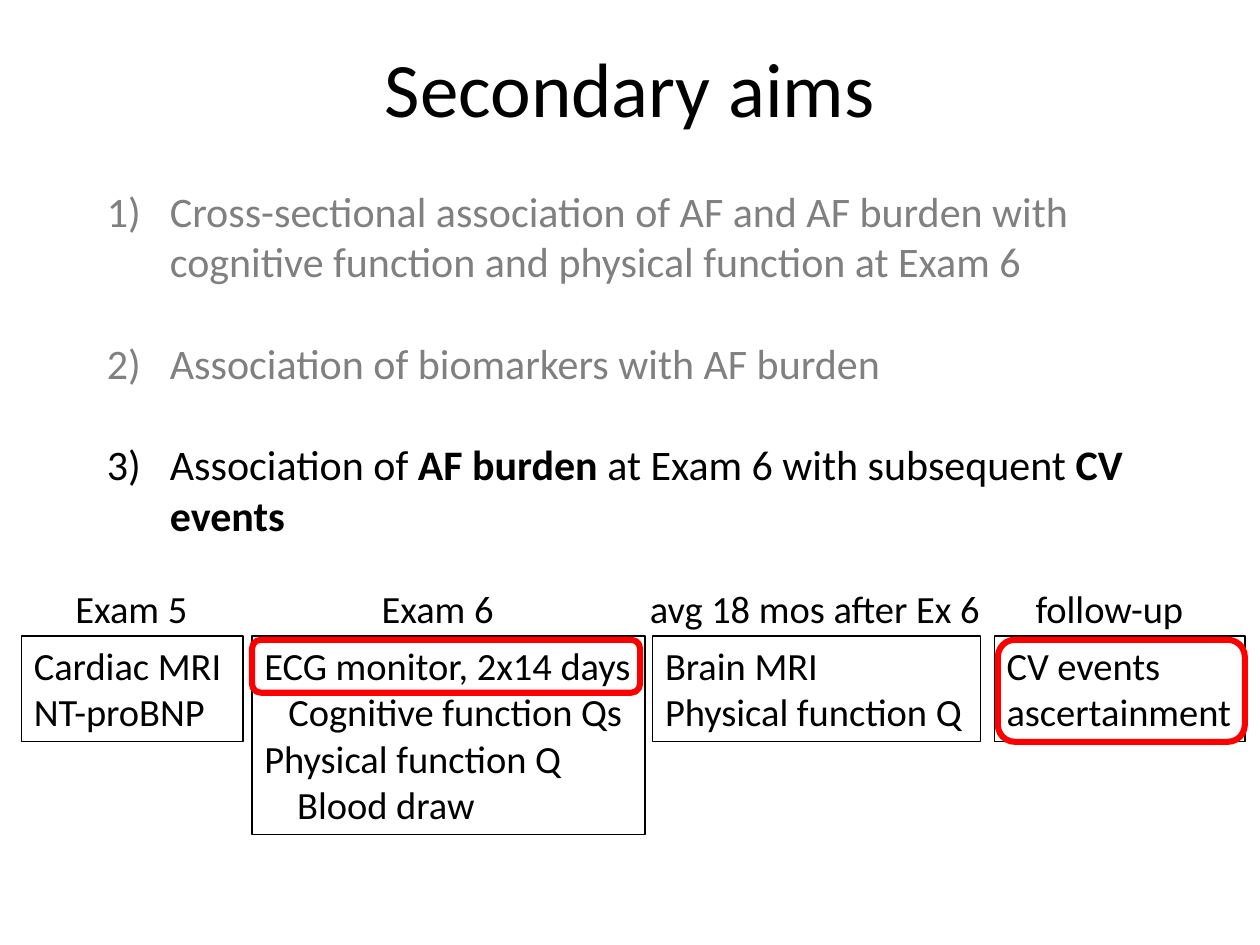
"""Build the "Secondary aims" slide with its study timeline."""
from dataclasses import dataclass
from typing import NamedTuple

from lxml.etree import SubElement
from pptx import Presentation
from pptx.dml.color import RGBColor as RGB
from pptx.enum.shapes import MSO_SHAPE as Shape
from pptx.enum.text import MSO_ANCHOR as Anchor, MSO_AUTO_SIZE as Fit, PP_ALIGN as Align
from pptx.oxml.ns import qn
from pptx.util import Inches, Pt

WIDTH, HEIGHT = Inches(10), Inches(7.5)


@dataclass(frozen=True)
class Theme:
    font: str = "Calibri"
    ink: RGB = RGB(0, 0, 0)
    muted: RGB = RGB(0x80, 0x80, 0x80)
    accent: RGB = RGB(0xFF, 0, 0)
    title: int = 44
    aim: int = 24
    label: int = 22
    border: float = 0.75
    ring: float = 3.5


class Area(NamedTuple):
    """Left, top, width and height in percent of the slide."""
    left: float
    top: float
    width: float
    height: float

    def emu(self) -> tuple:
        sides = (WIDTH, HEIGHT, WIDTH, HEIGHT)
        return tuple(round(v * side / 100) for v, side in zip(self, sides))


class Line(NamedTuple):
    text: str
    indent: float = 0


class Stage(NamedTuple):
    left: float
    width: float
    rows: int
    lines: tuple


class Aim(NamedTuple):
    color: RGB
    phrases: tuple


THEME = Theme()
STAGE_TOP, ROW, PADDING = 67.3, 4.93, 1.33
STAGES = (
    Stage(1.7, 17.6, 2, (Line("Cardiac MRI"), Line("NT-proBNP"))),
    Stage(20, 31.2, 4, (Line("ECG monitor, 2x14 days"), Line("Cognitive function Qs", 0.19),
                        Line("Physical function Q"), Line("Blood draw", 0.26))),
    Stage(51.8, 26, 2, (Line("Brain MRI"), Line("Physical function Q"))),
    Stage(78.9, 19.9, 2, (Line("CV events ascertainment"),)),
)
RINGS = (Area(20, 67.7, 30.8, 5.6), Area(79.2, 67.7, 19.6, 10.8))
LABELS = ("Exam 5", "Exam 6", "avg 18 mos after Ex 6", "follow-up")
LABEL_TABS = (2.43, 4.56, 7.62)
AIMS = (
    Aim(THEME.muted, (("Cross-sectional association of AF and AF burden with "
                       "cognitive function and physical function at Exam 6", False),)),
    Aim(THEME.muted, (("Association of biomarkers with AF burden", False),)),
    Aim(THEME.ink, (("Association of ", False), ("AF burden", True),
                    (" at Exam 6 with subsequent ", False), ("CV events", True))),
)


def style(p, size: float, color: RGB = THEME.ink) -> None:
    for r in p.runs:
        r.font.name, r.font.size = THEME.font, Pt(size)
        r.font.color.rgb = color


def indent(p, left: float, first: float = 0) -> None:
    pPr = p._p.get_or_add_pPr()
    pPr.set("marL", str(Inches(left)))
    pPr.set("indent", str(Inches(first)))


def add_outline(s, kind: Shape, area: Area, color: RGB, weight: float):
    sp = s.shapes.add_shape(kind, *area.emu())
    sp.shadow.inherit = False
    sp.fill.background()
    sp.line.color.rgb, sp.line.width = color, Pt(weight)
    return sp


def add_text(s, area: Area):
    tf = s.shapes.add_textbox(*area.emu()).text_frame
    tf.word_wrap = True
    return tf


def add_title(s, text: str, area: Area) -> None:
    sp = s.shapes.title
    sp.left, sp.top, sp.width, sp.height = area.emu()
    tf = sp.text_frame
    tf.text = text
    tf.auto_size, tf.vertical_anchor = Fit.NONE, Anchor.MIDDLE
    tf.paragraphs[0].alignment = Align.CENTER
    style(tf.paragraphs[0], THEME.title)


def add_stage(s, stage: Stage) -> None:
    area = Area(stage.left, STAGE_TOP, stage.width, stage.rows * ROW + PADDING)
    tf = add_outline(s, Shape.RECTANGLE, area, THEME.ink, THEME.border).text_frame
    tf.word_wrap, tf.vertical_anchor = True, Anchor.TOP
    tf.text = "\n".join(line.text for line in stage.lines)
    for p, line in zip(tf.paragraphs, stage.lines):
        p.alignment = Align.LEFT
        indent(p, line.indent)
        style(p, THEME.label)


def add_labels(s, area: Area) -> None:
    p = add_text(s, area).paragraphs[0]
    p.text = "\t".join(LABELS)
    style(p, THEME.label)
    tabs = SubElement(p._p.get_or_add_pPr(), qn("a:tabLst"))
    for pos in LABEL_TABS:
        SubElement(tabs, qn("a:tab"), pos=str(Inches(pos)), algn="l")


def add_aims(s, area: Area) -> None:
    tf = add_text(s, area)
    for i, aim in enumerate(AIMS):
        p = tf.add_paragraph() if i else tf.paragraphs[0]
        p.space_before = Pt(29.3 if i else 0)
        indent(p, 1, -0.5)
        SubElement(p._p.get_or_add_pPr(), qn("a:buAutoNum"), type="arabicParenR")
        for text, bold in aim.phrases:
            r = p.add_run()
            r.text, r.font.bold = text, bold
        style(p, THEME.aim, aim.color)


def main() -> None:
    prs = Presentation()
    prs.slide_width, prs.slide_height = WIDTH, HEIGHT
    s = prs.slides.add_slide(prs.slide_layouts[5])
    add_title(s, "Secondary aims", Area(5, 3.73, 90, 10.8))
    add_aims(s, Area(2.5, 18.93, 94.2, 39.07))
    add_labels(s, Area(5, 61.2, 91.9, 6.27))
    for stage in STAGES:
        add_stage(s, stage)
    for ring in RINGS:
        add_outline(s, Shape.ROUNDED_RECTANGLE, ring, THEME.accent, THEME.ring)
    prs.save("out.pptx")


if __name__ == "__main__":
    main()
